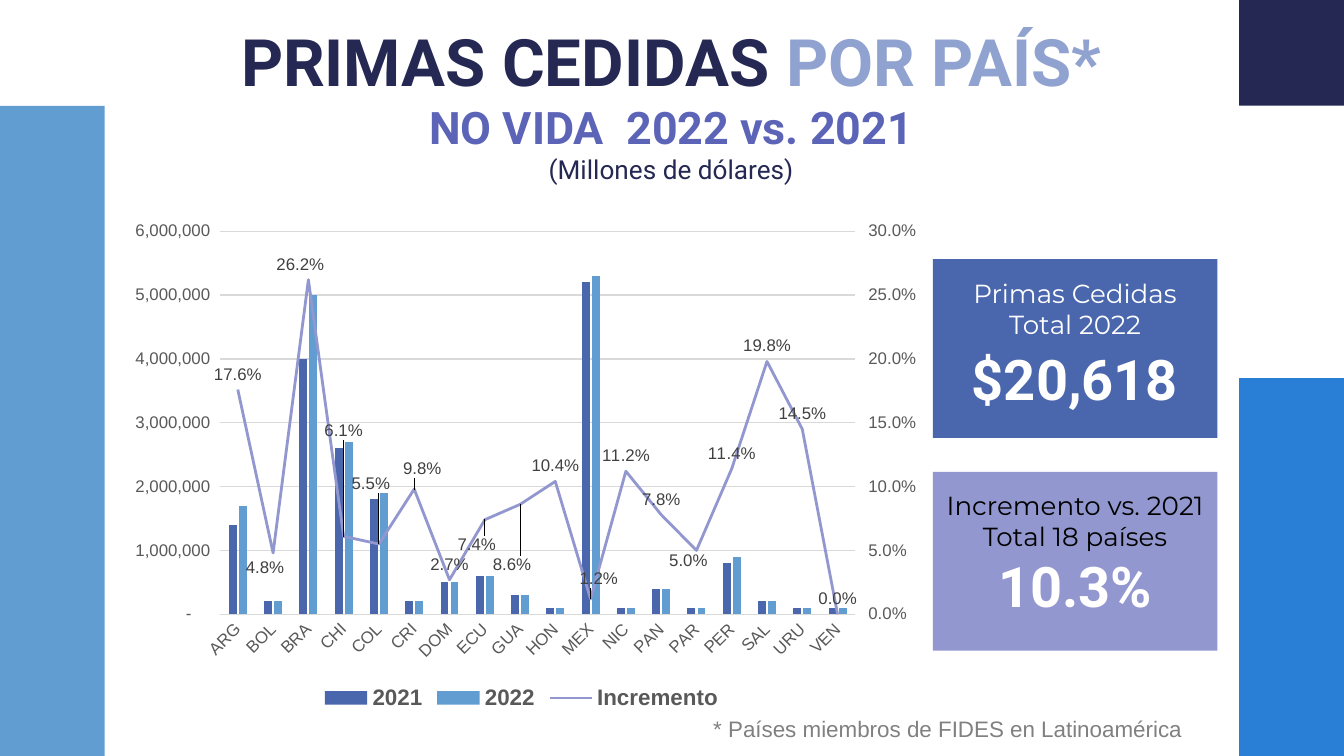
"""Build the slide on ceded premiums by country, with a combined column and line chart."""
from copy import deepcopy

from pptx import Presentation
from pptx.chart.axis import ValueAxis
from pptx.chart.data import CategoryChartData
from pptx.dml.color import RGBColor
from pptx.enum.chart import XL_CHART_TYPE, XL_LABEL_POSITION, XL_LEGEND_POSITION, XL_MARKER_STYLE, XL_TICK_MARK
from pptx.enum.shapes import MSO_SHAPE
from pptx.enum.text import MSO_ANCHOR, PP_ALIGN
from pptx.oxml import parse_xml
from pptx.oxml.ns import nsdecls, qn
from pptx.util import Cm, Pt

COLUMNS = XL_CHART_TYPE.COLUMN_CLUSTERED
ABOVE = XL_LABEL_POSITION.ABOVE
BOTTOM = XL_LEGEND_POSITION.BOTTOM
NO_MARKER = XL_MARKER_STYLE.NONE
NO_TICK = XL_TICK_MARK.NONE
TICK_OUT = XL_TICK_MARK.OUTSIDE
RECTANGLE = MSO_SHAPE.RECTANGLE
MIDDLE = MSO_ANCHOR.MIDDLE
CENTER = PP_ALIGN.CENTER

NAVY, BLUE, SKY, LILAC = "242852", "4A66AC", "629DD1", "9297CF"
WHITE, BLACK, GRID, GREY = "FFFFFF", "000000", "D9D9D9", "595959"
LAYOUT = "<c:layout {}><c:manualLayout>{}</c:manualLayout></c:layout>"


def style(font, color, **values):
    for name, value in values.items():
        setattr(font, name, value)
    font.color.rgb = RGBColor.from_string(color)


def add_text(left, top, width, height, lines):
    box = page.shapes.add_textbox(Cm(left), Cm(top), Cm(width), Cm(height))
    frame = box.text_frame
    frame.word_wrap = True
    frame.vertical_anchor = MIDDLE
    for side in ("left", "right", "top", "bottom"):
        setattr(frame, f"margin_{side}", Cm(0.25))
    para = frame.paragraphs[0]
    para.alignment = CENTER
    for number, spans in enumerate(lines):
        if number:
            para.add_line_break()
        for text, color, face, size, bold in spans:
            span = para.add_run()
            span.text = text
            style(span.font, color, name=face, size=Pt(size), bold=bold)


deck = Presentation()
deck.slide_width, deck.slide_height = Cm(25.4), Cm(14.29)
page = deck.slides.add_slide(deck.slide_layouts[6])

blocks = [
    (0, 2, 1.98, 12.29, SKY),
    (23.42, 7.15, 1.98, 7.14, "297FD5"),
    (23.42, 0, 1.98, 2, NAVY),
    (17.63, 8.92, 5.38, 3.38, LILAC),
    (17.63, 4.9, 5.38, 3.38, BLUE),
]
for left, top, width, height, color in blocks:
    block = page.shapes.add_shape(RECTANGLE, Cm(left), Cm(top), Cm(width), Cm(height))
    block.shadow.inherit = False
    block.fill.solid()
    block.fill.fore_color.rgb = RGBColor.from_string(color)
    block.line.fill.background()

add_text(1.65, 1.32, 22.07, 1.24, [
    [("PRIMAS CEDIDAS ", NAVY, "Roboto", 35, True), ("POR PAÍS*", "90A2CF", "Roboto", 35, True)],
    [("NO VIDA  2022 vs. 2021", "5C64B7", "Roboto", 24, True)],
    [("(Millones de dólares)", NAVY, "Roboto", 14, False)],
])

cards = [
    (5.21, 6.53, WHITE, ["Primas Cedidas", "Total 2022"], "$20,618"),
    (9.22, 10.44, BLACK, ["Incremento vs. 2021", "Total 18 países"], "10.3%"),
]
for label_top, figure_top, color, labels, figure in cards:
    add_text(17.63, label_top, 5.38, 1.24,
             [[(label, color, "Montserrat", 14, False)] for label in labels])
    add_text(17.63, figure_top, 5.38, 1.24, [[(figure, WHITE, "Roboto", 30, True)]])

data = CategoryChartData()
data.categories = "ARG BOL BRA CHI COL CRI DOM ECU GUA HON MEX NIC PAN PAR PER SAL URU VEN".split()
millions = {
    "2021": [1.4, 0.2, 4, 2.6, 1.8, 0.2, 0.5, 0.6, 0.3, 0.1, 5.2, 0.1, 0.4, 0.1, 0.8, 0.2, 0.1, 0.1],
    "2022": [1.7, 0.2, 5, 2.7, 1.9, 0.2, 0.5, 0.6, 0.3, 0.1, 5.3, 0.1, 0.4, 0.1, 0.9, 0.2, 0.1, 0.1],
}
for name, values in millions.items():
    data.add_series(name, [round(value * 1000000) for value in values], "#,##0")
data.add_series("Incremento", [
    0.176, 0.048, 0.262, 0.061, 0.055, 0.098, 0.027, 0.074, 0.086,
    0.104, 0.012, 0.112, 0.078, 0.05, 0.114, 0.198, 0.145, 0], "0.0%")
chart = page.shapes.add_chart(COLUMNS, Cm(2.16), Cm(3.99), Cm(15.39), Cm(9.53), data).chart
chart.has_title = False
style(chart.font, BLACK, name="Arial", size=Pt(10))
chart.has_legend = True
chart.legend.position = BOTTOM
chart.legend.include_in_layout = False
style(chart.legend.font, GREY, name="Arial", size=Pt(12), bold=True)

columns = chart.plots[0]
columns.gap_width, columns.overlap = 219, -27
columns.vary_by_categories = False
for series, color in zip(columns.series, (BLUE, SKY)):
    series.format.fill.solid()
    series.format.fill.fore_color.rgb = RGBColor.from_string(color)

countries, premiums = chart.category_axis, chart.value_axis
for axis in (countries, premiums):
    axis.major_tick_mark = axis.minor_tick_mark = NO_TICK
    style(axis.tick_labels.font, GREY, name="Arial", size=Pt(9))
countries.has_major_gridlines = False
premiums.has_major_gridlines = True
for line in (countries.format.line, premiums.major_gridlines.format.line):
    line.color.rgb = RGBColor.from_string(GRID)
    line.width = Pt(0.75)
premiums.format.line.fill.background()
premiums.minimum_scale, premiums.maximum_scale, premiums.major_unit = 0, 6000000, 1000000
premiums.tick_labels.number_format = '_ * #,##0_ ;_ * \\-#,##0_ ;_ * "-"??_ ;_ '
premiums.tick_labels.number_format_is_linked = False
country_axis, premium_axis = countries._element, premiums._element
country_axis.find(qn("c:txPr")).find(qn("a:bodyPr")).set("rot", "-2700000")

hidden_axis, growth_axis = deepcopy(country_axis), deepcopy(premium_axis)
for axis, own, crossed in ((hidden_axis, "501", "502"), (growth_axis, "502", "501")):
    axis.find(qn("c:axId")).set("val", own)
    axis.find(qn("c:crossAx")).set("val", crossed)
hidden_axis.find(qn("c:delete")).set("val", "1")
growth_axis.find(qn("c:axPos")).set("val", "r")
growth_axis.find(qn("c:crosses")).set("val", "max")
premium_axis.addnext(growth_axis)
growth_axis.addnext(hidden_axis)
growth = ValueAxis(growth_axis)
growth.has_major_gridlines = False
growth.major_tick_mark = TICK_OUT
growth.maximum_scale, growth.major_unit = 0.3, 0.05
growth.tick_labels.number_format = "0.0%"

line_chart = parse_xml(
    f'<c:lineChart {nsdecls("c")}><c:grouping val="standard"/><c:varyColors val="0"/>'
    '<c:marker val="1"/><c:axId val="501"/><c:axId val="502"/></c:lineChart>')
line_series = columns.series[2]._element
for flag in line_series.findall(qn("c:invertIfNegative")):
    line_series.remove(flag)
line_chart.insert(2, line_series)
plot_area = country_axis.getparent()
plot_area.find(qn("c:barChart")).addnext(line_chart)

increase = chart.plots[1].series[0]
increase.smooth = False
increase.marker.style = NO_MARKER
increase.format.line.color.rgb = RGBColor.from_string(LILAC)
increase.format.line.width = Pt(1.5)
labels = increase.data_labels
labels.show_value = True
labels.position = ABOVE
labels.number_format, labels.number_format_is_linked = "0.0%", False
style(labels.font, "404040", name="Arial", size=Pt(9))

label_shifts = {
    1: (-0.01, 0.06), 2: (-0.01, 0), 3: (0, -0.18), 4: (-0.01, -0.09), 5: (0.01, -0.01),
    7: (-0.01, 0.08), 8: (-0.01, 0.15), 10: (0.01, -0.01), 13: (-0.01, 0.05),
}
for point in label_shifts:
    label = increase.points[point].data_label
    label.position = ABOVE
    style(label.font, "404040", name="Arial", size=Pt(9))
for item in line_series.find(qn("c:dLbls")).findall(qn("c:dLbl")):
    index = item.find(qn("c:idx"))
    across, down = label_shifts[int(index.get("val"))]
    index.addnext(parse_xml(LAYOUT.format(nsdecls("c"), f'<c:x val="{across}"/><c:y val="{down}"/>')))

for old in plot_area.findall(qn("c:layout")):
    plot_area.remove(old)
frame_xml = '<c:layoutTarget val="inner"/><c:xMode val="edge"/><c:yMode val="edge"/>'
for side, share in {"x": 0.13, "y": 0.04, "w": 0.78, "h": 0.76}.items():
    frame_xml += f'<c:{side} val="{share}"/>'
plot_area.insert(0, parse_xml(LAYOUT.format(nsdecls("c"), frame_xml)))

footnote = page.shapes.add_textbox(Cm(13.23), Cm(13.39), Cm(9.45), Cm(0.76))
footnote.text_frame.word_wrap = False
span = footnote.text_frame.paragraphs[0].add_run()
span.text = "* Países miembros de FIDES en Latinoamérica"
style(span.font, "808080", name="Arial", size=Pt(12))

deck.save("out.pptx")
